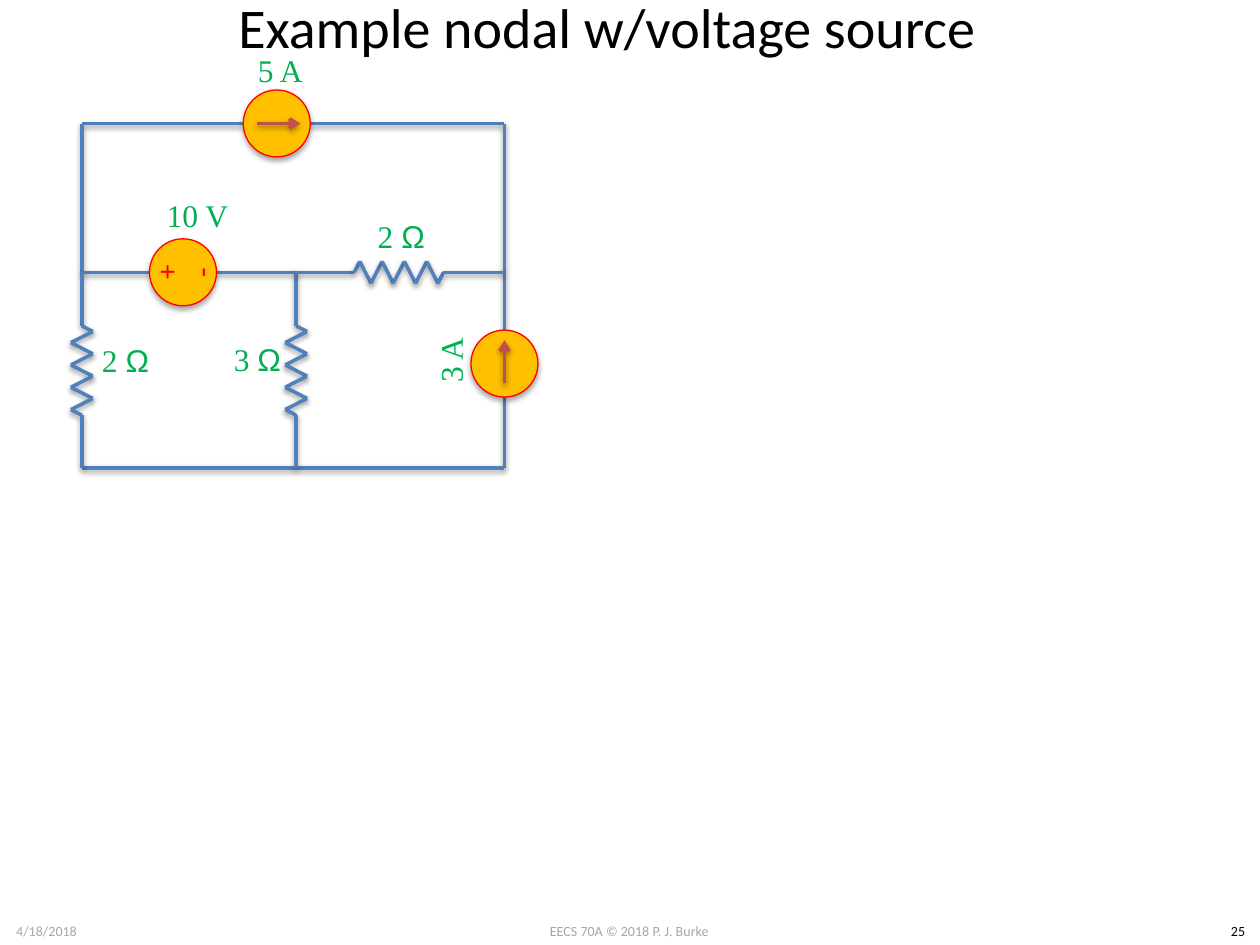
from dataclasses import dataclass

from lxml import etree
from pptx import Presentation
from pptx.dml.color import RGBColor
from pptx.enum.shapes import MSO_CONNECTOR, MSO_SHAPE
from pptx.enum.text import MSO_ANCHOR, PP_ALIGN
from pptx.oxml.ns import qn
from pptx.util import Cm, Pt

STRAIGHT = MSO_CONNECTOR.STRAIGHT
ELLIPSE = MSO_SHAPE.OVAL
MIDDLE = MSO_ANCHOR.MIDDLE
CENTER = PP_ALIGN.CENTER


@dataclass(frozen=True)
class Theme:
    wire: RGBColor = RGBColor(0x4F, 0x81, 0xBD)
    arrow: RGBColor = RGBColor(0xC0, 0x50, 0x4D)
    source_fill: RGBColor = RGBColor(0xFF, 0xC0, 0x00)
    red: RGBColor = RGBColor(0xFF, 0x00, 0x00)
    green: RGBColor = RGBColor(0x00, 0xB0, 0x50)
    gray: RGBColor = RGBColor(0xA6, 0xA6, 0xA6)
    black: RGBColor = RGBColor(0x00, 0x00, 0x00)
    body_font: str = "Calibri"
    label_font: str = "Times New Roman"
    symbol_font: str = "Arial"
    title_size: Pt = Pt(32)
    label_size: Pt = Pt(18)
    plus_size: Pt = Pt(16.6)
    footer_size: Pt = Pt(8)
    line_width: Pt = Pt(2)
    outline_width: Pt = Pt(0.75)


theme = Theme()

presentation = Presentation()
presentation.slide_width = Cm(25.4)
presentation.slide_height = Cm(19.05)
slide = presentation.slides.add_slide(presentation.slide_layouts[5])


def add_line(start, end, color=theme.wire):
    """Draw a straight line between two points in cm; the theme gives its shadow."""
    line = slide.shapes.add_connector(STRAIGHT, *map(Cm, start + end))
    line.line.color.rgb = color
    line.line.width = theme.line_width
    return line


def add_text(text, center, size, color, font, font_size, rotation=0):
    """Centre a text box on a point; an ohm sign gets the symbol font."""
    (x, y), (width, height) = center, size
    box = slide.shapes.add_textbox(
        Cm(x - width / 2), Cm(y - height / 2), Cm(width), Cm(height))
    box.rotation = rotation
    frame = box.text_frame
    frame.word_wrap = True
    frame.vertical_anchor = MIDDLE
    frame.margin_left = frame.margin_right = 0
    frame.margin_top = frame.margin_bottom = 0
    paragraph = frame.paragraphs[0]
    paragraph.alignment = CENTER
    paragraph.font.name = font
    paragraph.font.size = font_size
    paragraph.font.color.rgb = color
    value = text.removesuffix("Ω")
    paragraph.add_run().text = value
    if value != text:
        symbol = paragraph.add_run()
        symbol.text = "Ω"
        symbol.font.name = theme.symbol_font


# Title
title = slide.shapes.title
title.left, title.top, title.width, title.height = Cm(0.81), Cm(-0.76), Cm(22.86), Cm(2.59)
title.text_frame.text = "Example nodal w/voltage source"
title.text_frame.vertical_anchor = MIDDLE
paragraph = title.text_frame.paragraphs[0]
paragraph.alignment = CENTER
paragraph.font.name = theme.body_font
paragraph.font.size = theme.title_size
paragraph.font.color.rgb = theme.black

# Footer
for text, center_x, width, color in (
    ("EECS 70A © 2018 P. J. Burke", 12.69, 5.92, theme.gray),
    ("4/18/2018", 0.94, 1.88, theme.gray),
    ("25", 24.96, 0.89, theme.black),
):
    add_text(text, (center_x, 18.77), (width, 0.61), color,
             theme.body_font, theme.footer_size)

# Circuit grid, in cm
LEFT, INNER, RIGHT = 1.65, 5.97, 10.17
TOP, NODE, BOTTOM = 2.49, 5.49, 9.43
RADIUS = 0.675
TOP_SOURCE, VOLTAGE_SOURCE, RIGHT_SOURCE = (5.58, TOP), (3.69, NODE), (RIGHT, 7.33)
PEAKS, PITCH, SWING = 8, 0.225, 0.22
RESISTOR_LENGTH = PEAKS * PITCH
RESISTOR_TOP, RESISTOR_LEFT = 6.57, 7.14

# Wires
for start, end in (
    ((LEFT, TOP), (TOP_SOURCE[0] - RADIUS, TOP)),
    ((TOP_SOURCE[0] + RADIUS, TOP), (RIGHT, TOP)),
    ((LEFT, TOP), (LEFT, NODE)),
    ((RIGHT, TOP), (RIGHT, RIGHT_SOURCE[1] - RADIUS)),
    ((RIGHT, RIGHT_SOURCE[1] + RADIUS), (RIGHT, BOTTOM)),
    ((LEFT, NODE), (VOLTAGE_SOURCE[0] - RADIUS, NODE)),
    ((VOLTAGE_SOURCE[0] + RADIUS, NODE), (INNER, NODE)),
    ((LEFT, BOTTOM), (RIGHT, BOTTOM)),
):
    add_line(start, end)

# Resistors with their leads: first node, zigzag, last node
zigzag = [(0, 0)]
zigzag += [((i + 0.5) * PITCH, SWING * (-1) ** i) for i in range(PEAKS)]
zigzag += [(RESISTOR_LENGTH, 0)]
resistors = [
    [(x, NODE)] + [(x + side, RESISTOR_TOP + along) for along, side in zigzag] + [(x, BOTTOM)]
    for x in (LEFT, INNER)
]
resistors.append(
    [(INNER, NODE)]
    + [(RESISTOR_LEFT + along, NODE - side) for along, side in zigzag]
    + [(RIGHT, NODE)])
for points in resistors:
    for start, end in zip(points, points[1:]):
        add_line(start, end)

# Sources
for x, y in (TOP_SOURCE, VOLTAGE_SOURCE, RIGHT_SOURCE):
    source = slide.shapes.add_shape(
        ELLIPSE, Cm(x - RADIUS), Cm(y - RADIUS), Cm(2 * RADIUS), Cm(2 * RADIUS))
    source.fill.solid()
    source.fill.fore_color.rgb = theme.source_fill
    source.line.color.rgb = theme.red
    source.line.width = theme.outline_width

# Current directions
for (x, y), (step_x, step_y) in ((TOP_SOURCE, (1, 0)), (RIGHT_SOURCE, (0, -1))):
    arrow = add_line((x - 0.4 * step_x, y - 0.4 * step_y),
                     (x + 0.47 * step_x, y + 0.47 * step_y), theme.arrow)
    etree.SubElement(arrow.line._get_or_add_ln(), qn("a:tailEnd"), type="arrow")

# Voltage polarity
for sign, x, font_size in (("+", 3.33, theme.plus_size), ("-", 4.04, theme.label_size)):
    add_text(sign, (x, NODE), (0.66, 0.84), theme.red, theme.body_font, font_size, 270)

# Component values
for text, center, rotation in (
    ("2 Ω", (2.53, 7.25), 0),
    ("3 Ω", (5.19, 7.23), 0),
    ("2 Ω", (8.09, 4.76), 0),
    ("10 V", (3.98, 4.33), 0),
    ("3 A", (9.08, 7.25), 270),
    ("5 A", (5.65, 1.41), 0),
):
    add_text(text, center, (3.02, 1.85), theme.green,
             theme.label_font, theme.label_size, rotation)

presentation.save("out.pptx")
